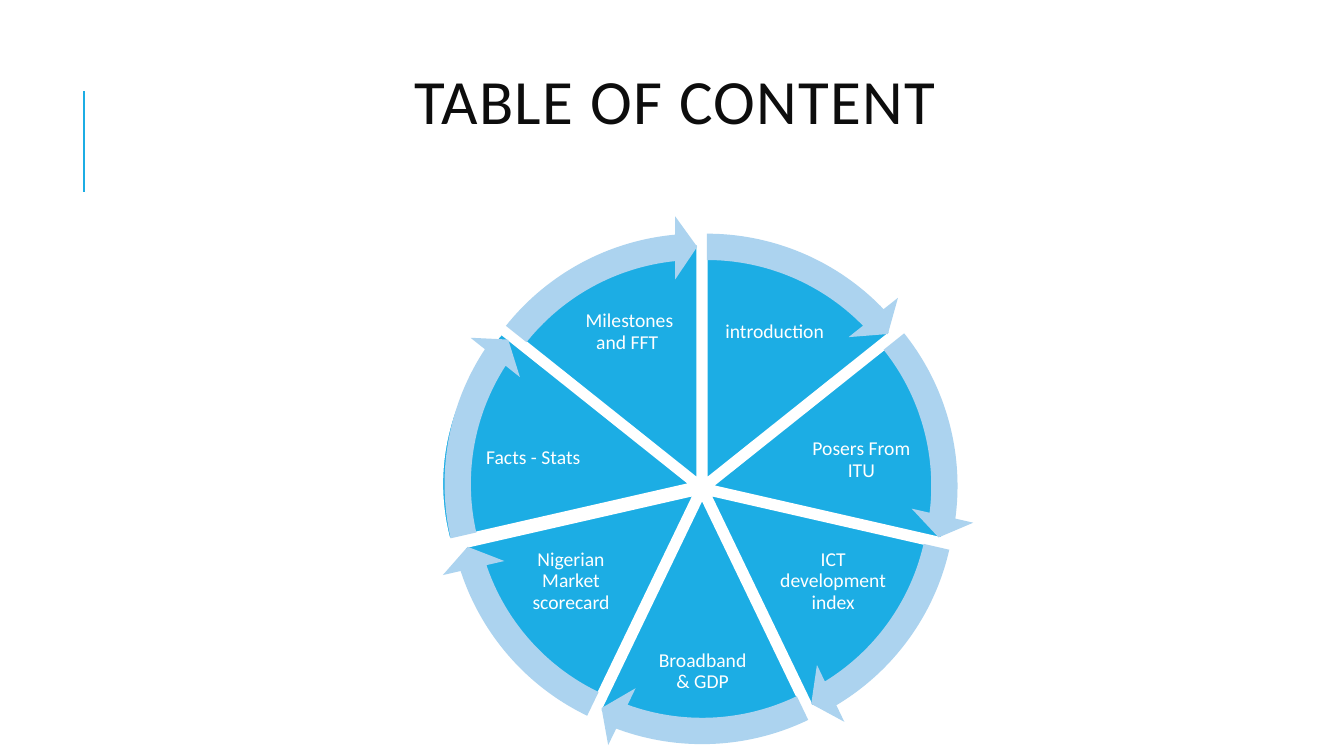
import math

from lxml import etree
from pptx import Presentation
from pptx.dml.color import RGBColor
from pptx.enum.shapes import MSO_CONNECTOR, MSO_SHAPE
from pptx.enum.text import MSO_ANCHOR, PP_ALIGN
from pptx.oxml.ns import qn
from pptx.util import Inches, Pt

PIE, ARROW = MSO_SHAPE.PIE, MSO_SHAPE.CIRCULAR_ARROW
STRAIGHT = MSO_CONNECTOR.STRAIGHT
MIDDLE, CENTER = MSO_ANCHOR.MIDDLE, PP_ALIGN.CENTER

BLUE = RGBColor(0x1C, 0xAD, 0xE4)
PALE = RGBColor(0xAC, 0xD3, 0xEF)
WHITE = RGBColor(0xFF, 0xFF, 0xFF)
INK = RGBColor(0x0D, 0x0D, 0x0D)

COLS, ROWS = 133.33, 75
FULL_TURN, TOP = 216, 162
HUB_X, HUB_Y, PUSH = 69.65, 48.45, 1.1
PIE_SIZE, ARROW_SIZE = (46.5, 46.5), (52.2, 52.2)
BAND, HEAD_ANGLE, HEAD = 0.05, 3.28, 0.06

TOPICS = [
    ("introduction", (71.3, 28.5, 11.1, 8.9), PIE_SIZE, 0),
    ("Posers From ITU", (79.1, 41.8, 12.7, 7.7), PIE_SIZE, 0),
    ("ICT development index", (77.1, 53.4, 11.1, 8.6), PIE_SIZE, 0),
    ("Broadband & GDP", (64.3, 62.8, 10.8, 7.7), PIE_SIZE, 0),
    ("Nigerian Market scorecard", (51.1, 53.4, 11.1, 8.6), PIE_SIZE, 0),
    ("Facts - Stats", (46.2, 41.7, 13.4, 7.6), (49, 45.7), -0.2),
    ("Milestones and FFT ", (56.9, 28.5, 11.1, 8.9), PIE_SIZE, 0),
]


class Deck:
    font = "Calibri"

    def __init__(self):
        self.prs = Presentation()
        self.prs.slide_width = Inches(13.33)
        self.prs.slide_height = Inches(7.5)
        self.s = self.prs.slides.add_slide(self.prs.slide_layouts[6])

    def x(self, cols):
        return round(self.prs.slide_width * cols / COLS)

    def y(self, rows):
        return round(self.prs.slide_height * rows / ROWS)

    def box(self, left, top, width, height):
        return self.x(left), self.y(top), self.x(width), self.y(height)

    def text(self, text, box, size, color, spacing, inset, tracking=0):
        sp = self.s.shapes.add_textbox(*self.box(*box))
        tf = sp.text_frame
        frame = {"word_wrap": True, "vertical_anchor": MIDDLE}
        for side in ("left", "right", "top", "bottom"):
            frame["margin_" + side] = Inches(inset)
        p = tf.paragraphs[0]
        r = p.add_run()
        r.text = text
        formats = (
            (tf, frame),
            (p, {"alignment": CENTER, "line_spacing": spacing}),
            (r.font, {"name": self.font, "size": Pt(size)}),
        )
        for target, values in formats:
            for name, value in values.items():
                setattr(target, name, value)
        r.font.color.rgb = color
        if tracking:
            r.font._element.set("spc", str(tracking * 100))

    def shape(self, kind, center, size, adjustments, fill, line=None):
        (cx, cy), (w, h) = center, size
        sp = self.s.shapes.add_shape(
            kind, *self.box(cx - w / 2, cy - h / 2, w, h))
        for i, value in enumerate(adjustments):
            sp.adjustments[i] = value
        sp.shadow.inherit = False
        sp.fill.solid()
        sp.fill.fore_color.rgb = fill
        if line is None:
            sp.line.fill.background()
        else:
            sp.line.color.rgb = line
            sp.line.width = Pt(1.25)

    def line(self, x1, y1, x2, y2, color, width):
        c = self.s.shapes.add_connector(
            STRAIGHT, self.x(x1), self.y(y1), self.x(x2), self.y(y2))
        c.line.color.rgb = color
        c.line.width = Pt(width)
        etree.SubElement(c._element.spPr, qn("a:effectLst"))


def slice_center(i, nudge):
    angle = math.radians((i + 0.5) * 360 / len(TOPICS) - 90)
    return (HUB_X + PUSH * math.cos(angle) + nudge,
            HUB_Y + PUSH * math.sin(angle) + nudge)


def main():
    deck = Deck()
    deck.line(8.3, 19, 8.3, 9, BLUE, 1.5)
    deck.text("TABLE OF CONTENT ", (11.1, 6.1, 113.3, 8.9), 45, INK,
              0.8, 0.05, tracking=1)

    step = FULL_TURN / len(TOPICS)
    arrows = []
    for i, (label, box, size, nudge) in enumerate(TOPICS):
        start = (TOP + i * step) % FULL_TURN
        end = (start + step) % FULL_TURN
        center = slice_center(i, nudge)
        deck.shape(PIE, center, size, (start, end), BLUE, WHITE)
        deck.text(label, box, 14, WHITE, 0.9, 0.02)
        arrows.append((center, (BAND, HEAD_ANGLE, end - HEAD_ANGLE, start, HEAD)))
    for center, adjustments in arrows:
        deck.shape(ARROW, center, ARROW_SIZE, adjustments, PALE)

    deck.prs.save("out.pptx")


if __name__ == "__main__":
    main()
